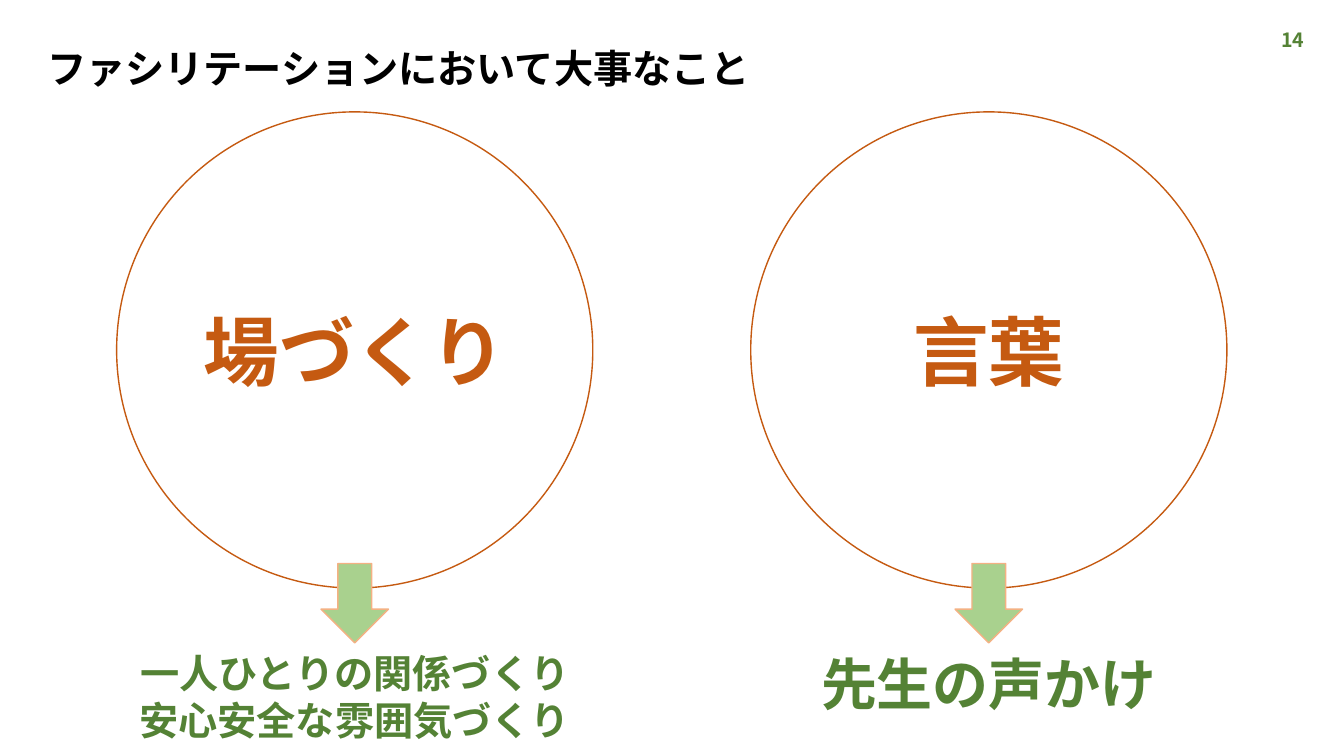
from dataclasses import dataclass

from lxml.etree import SubElement
from pptx import Presentation
from pptx.dml.color import RGBColor
from pptx.enum.shapes import MSO_SHAPE as Preset
from pptx.enum.text import MSO_ANCHOR as Anchor, PP_ALIGN as Align
from pptx.oxml.ns import qn
from pptx.util import Cm, Pt


@dataclass(frozen=True)
class Theme:
    font: str = "Noto Sans CJK JP"
    black: str = "000000"
    white: str = "FFFFFF"
    orange: str = "C55A11"
    peach: str = "F4B183"
    green: str = "548235"
    light_green: str = "A9D18E"
    number_size: int = 14
    body_size: int = 28
    caption_size: int = 40
    circle_size: int = 54
    line_width: int = 1


theme = Theme()


def write(shape, lines, size, color, align, anchor=Anchor.TOP, wrap=True):
    frame = shape.text_frame
    frame.word_wrap = wrap
    frame.vertical_anchor = anchor
    frame.text = "\n".join(lines)
    for paragraph in frame.paragraphs:
        paragraph.alignment = align
        for run in paragraph.runs:
            font = run.font
            font.name = theme.font
            font.size = Pt(size)
            font.bold = True
            font.color.rgb = RGBColor.from_string(color)
            SubElement(run._r.get_or_add_rPr(), qn("a:ea"), typeface=theme.font)


def add_preset(preset, left, top, width, height, fill, line):
    shape = slide.shapes.add_shape(preset, Cm(left), Cm(top), Cm(width), Cm(height))
    shape.shadow.inherit = False
    shape.fill.solid()
    shape.fill.fore_color.rgb = RGBColor.from_string(fill)
    shape.line.color.rgb = RGBColor.from_string(line)
    shape.line.width = Pt(theme.line_width)
    return shape


presentation = Presentation()
presentation.slide_width = Cm(33.87)
presentation.slide_height = Cm(19.05)
slide = presentation.slides.add_slide(presentation.slide_layouts[6])

number = slide.shapes.add_textbox(Cm(25.5), Cm(0.48), Cm(7.62), Cm(1.02))
write(number, ["14"], theme.number_size, theme.green, Align.RIGHT, Anchor.MIDDLE)

title = slide.shapes.add_textbox(Cm(0.94), Cm(0.99), Cm(18.47), Cm(1.45))
write(title, ["ファシリテーションにおいて大事なこと"], theme.body_size, theme.black,
      Align.LEFT, wrap=False)

diameter = 12
arrow_width, arrow_height = 1.7, 2
columns = [
    (8.94, "場づくり", ["一人ひとりの関係づくり", "安心安全な雰囲気づくり"],
     theme.body_size, 11.48, 2.64),
    (24.92, "言葉", ["先生の声かけ"], theme.caption_size, 9.07, 1.96),
]

for center, keyword, caption_lines, caption_size, width, height in columns:
    circle = add_preset(Preset.OVAL, center - diameter / 2, 2.82, diameter, diameter,
                        theme.white, theme.orange)
    write(circle, [keyword], theme.circle_size, theme.orange, Align.CENTER, Anchor.MIDDLE)

    caption = slide.shapes.add_textbox(Cm(center - width / 2), Cm(16.23), Cm(width), Cm(height))
    write(caption, caption_lines, caption_size, theme.green, Align.CENTER, wrap=False)

    add_preset(Preset.DOWN_ARROW, center - arrow_width / 2, 14.2, arrow_width, arrow_height,
               theme.light_green, theme.peach)

presentation.save("out.pptx")
